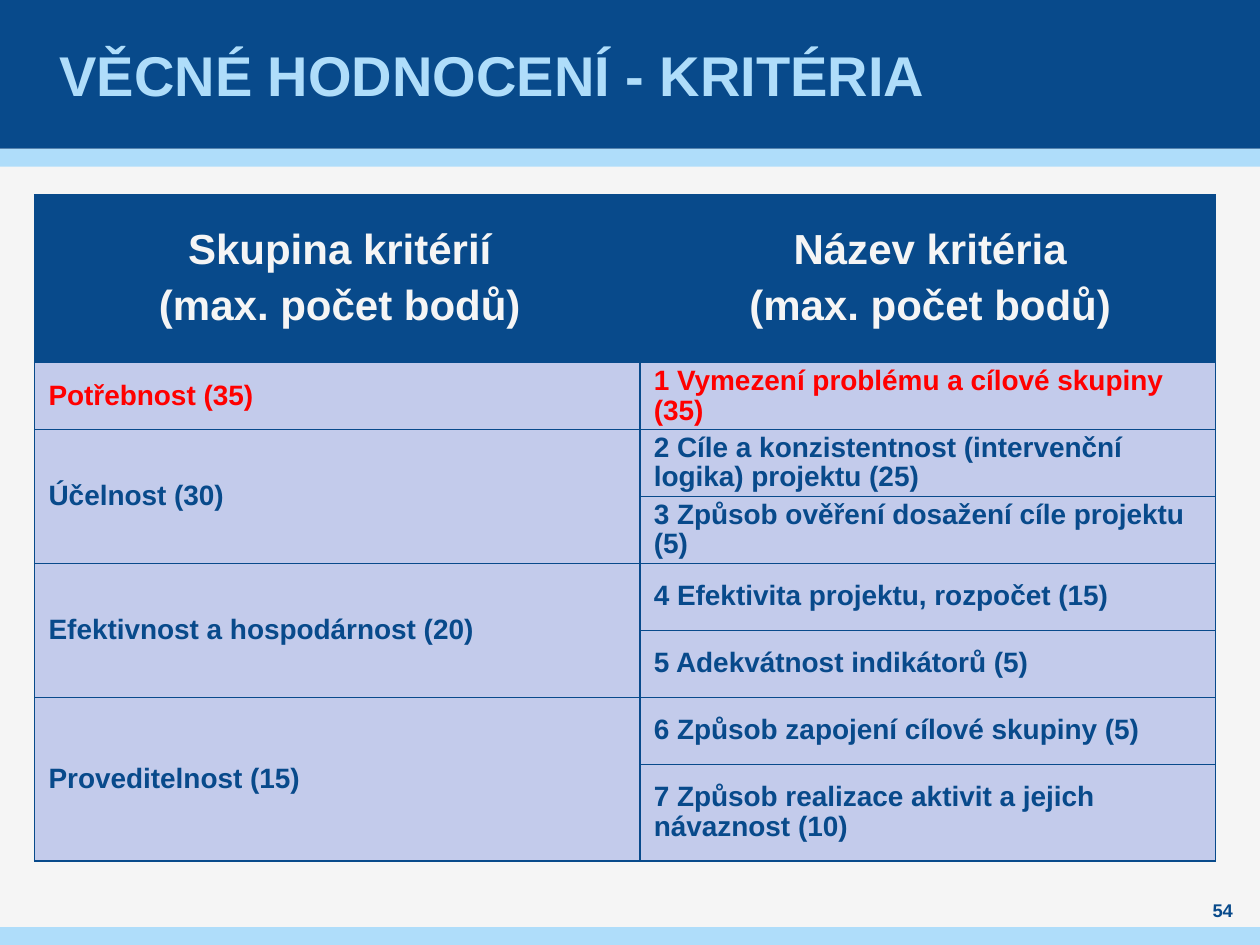
import lxml.etree
import pptx
import pptx.dml.color
import pptx.enum.shapes
import pptx.enum.text
import pptx.oxml.ns
import pptx.util

Cm = pptx.util.Cm
Pt = pptx.util.Pt
ALIGN = pptx.enum.text.PP_ALIGN
MIDDLE = pptx.enum.text.MSO_ANCHOR.MIDDLE

COLORS = {
    "background": "F5F5F5",
    "navy": "084A8B",
    "sky": "AFDDFA",
    "cell": "C3CBEB",
    "highlight": "FF0000",
}
SLIDE_WIDTH, SLIDE_HEIGHT = 25.4, 19.05
HEADER_HEIGHT, STRIPE_HEIGHT = 3, 0.36

COLUMN_WIDTHS = [12.2, 11.6]
ROW_HEIGHTS = [3.38] + [1.35] * 6 + [1.95]
HEADINGS = ["Skupina kritérií\n(max. počet bodů)", "Název kritéria\n(max. počet bodů)"]
# Each group of criteria: name, text colour, criteria
GROUPS = [
    ("Potřebnost (35)", "highlight", ["1 Vymezení problému a cílové skupiny (35)"]),
    ("Účelnost (30)", "navy", [
        "2 Cíle a konzistentnost (intervenční logika) projektu (25)",
        "3 Způsob ověření dosažení cíle projektu (5)",
    ]),
    ("Efektivnost a hospodárnost (20)", "navy", [
        "4 Efektivita projektu, rozpočet (15)",
        "5 Adekvátnost indikátorů (5)",
    ]),
    ("Proveditelnost (15)", "navy", [
        "6 Způsob zapojení cílové skupiny (5)",
        "7 Způsob realizace aktivit a jejich návaznost (10)",
    ]),
]


def rgb(name):
    return pptx.dml.color.RGBColor.from_string(COLORS[name])


def format_font(font, size, color):
    font.name = "Arial"
    font.size = Pt(size)
    font.bold = True
    font.color.rgb = rgb(color)


def add_band(slide, top, height, color):
    shape = slide.shapes.add_shape(
        pptx.enum.shapes.MSO_SHAPE.RECTANGLE, 0, Cm(top), Cm(SLIDE_WIDTH), Cm(height))
    shape.shadow.inherit = False
    shape.fill.solid()
    shape.fill.fore_color.rgb = rgb(color)
    shape.line.fill.background()


def add_text(slide, box, text, size, color, align=ALIGN.LEFT, inset=0):
    text_frame = slide.shapes.add_textbox(*map(Cm, box)).text_frame
    text_frame.word_wrap = True
    text_frame.vertical_anchor = MIDDLE
    text_frame.margin_left = text_frame.margin_right = Cm(inset)
    text_frame.margin_top = text_frame.margin_bottom = 0
    text_frame.text = text
    paragraph = text_frame.paragraphs[0]
    paragraph.alignment = align
    format_font(paragraph.runs[0].font, size, color)


def add_borders(cell):
    properties = cell._tc.get_or_add_tcPr()
    for side in ("lnL", "lnR", "lnT", "lnB"):
        line = lxml.etree.SubElement(
            properties, pptx.oxml.ns.qn(f"a:{side}"), w=str(Pt(1)))
        fill = lxml.etree.SubElement(line, pptx.oxml.ns.qn("a:solidFill"))
        lxml.etree.SubElement(fill, pptx.oxml.ns.qn("a:srgbClr"), val=COLORS["navy"])


def style_cell(cell, fill):
    add_borders(cell)
    cell.fill.solid()
    cell.fill.fore_color.rgb = rgb(fill)
    cell.vertical_anchor = MIDDLE
    cell.margin_left = cell.margin_right = Cm(0.18)
    cell.margin_top = cell.margin_bottom = 0


def fill_cell(cell, text, size, color, align=ALIGN.LEFT):
    cell.text_frame.text = text
    for index, paragraph in enumerate(cell.text_frame.paragraphs):
        properties = paragraph._p.get_or_add_pPr()
        properties.set("marL", str(Cm(0.1)))
        properties.set("indent", "0")
        paragraph.alignment = align
        paragraph.line_spacing = 0.96
        paragraph.space_before = Pt(3 if index else 0)
        paragraph.space_after = Pt(3)
        format_font(paragraph.runs[0].font, size, color)


def add_criteria_table(slide):
    table = slide.shapes.add_table(
        len(ROW_HEIGHTS), len(COLUMN_WIDTHS), Cm(0.7), Cm(3.93),
        Cm(sum(COLUMN_WIDTHS)), Cm(sum(ROW_HEIGHTS))).table
    for column, width in zip(table.columns, COLUMN_WIDTHS):
        column.width = Cm(width)
    for index, (row, height) in enumerate(zip(table.rows, ROW_HEIGHTS)):
        row.height = Cm(height)
        for cell in row.cells:
            style_cell(cell, "cell" if index else "navy")

    # Headings
    for cell, heading in zip(table.rows[0].cells, HEADINGS):
        fill_cell(cell, heading, 24, "background", ALIGN.CENTER)

    # Groups, each spanning the rows of its criteria
    first = 1
    for group, color, criteria in GROUPS:
        last = first + len(criteria) - 1
        if last > first:
            table.cell(first, 0).merge(table.cell(last, 0))
        fill_cell(table.cell(first, 0), group, 16, color)
        for row, criterion in enumerate(criteria, first):
            fill_cell(table.cell(row, 1), criterion, 16, color)
        first = last + 1


def main():
    presentation = pptx.Presentation()
    presentation.slide_width = Cm(SLIDE_WIDTH)
    presentation.slide_height = Cm(SLIDE_HEIGHT)
    slide = presentation.slides.add_slide(presentation.slide_layouts[6])
    slide.background.fill.solid()
    slide.background.fill.fore_color.rgb = rgb("background")

    # Header and footer bands
    add_band(slide, HEADER_HEIGHT, STRIPE_HEIGHT, "sky")
    add_band(slide, 0, HEADER_HEIGHT, "navy")
    add_band(slide, SLIDE_HEIGHT - STRIPE_HEIGHT, STRIPE_HEIGHT, "sky")

    # Title and page number
    add_text(slide, (1.1, 0, 24.2, HEADER_HEIGHT), "VĚCNÉ HODNOCENÍ - KRITÉRIA",
             32, "sky", inset=0.1)
    add_text(slide, (24, 18.1, 1.3, 0.5), "54", 10.5, "navy", ALIGN.CENTER)

    add_criteria_table(slide)
    presentation.save("out.pptx")


if __name__ == "__main__":
    main()
